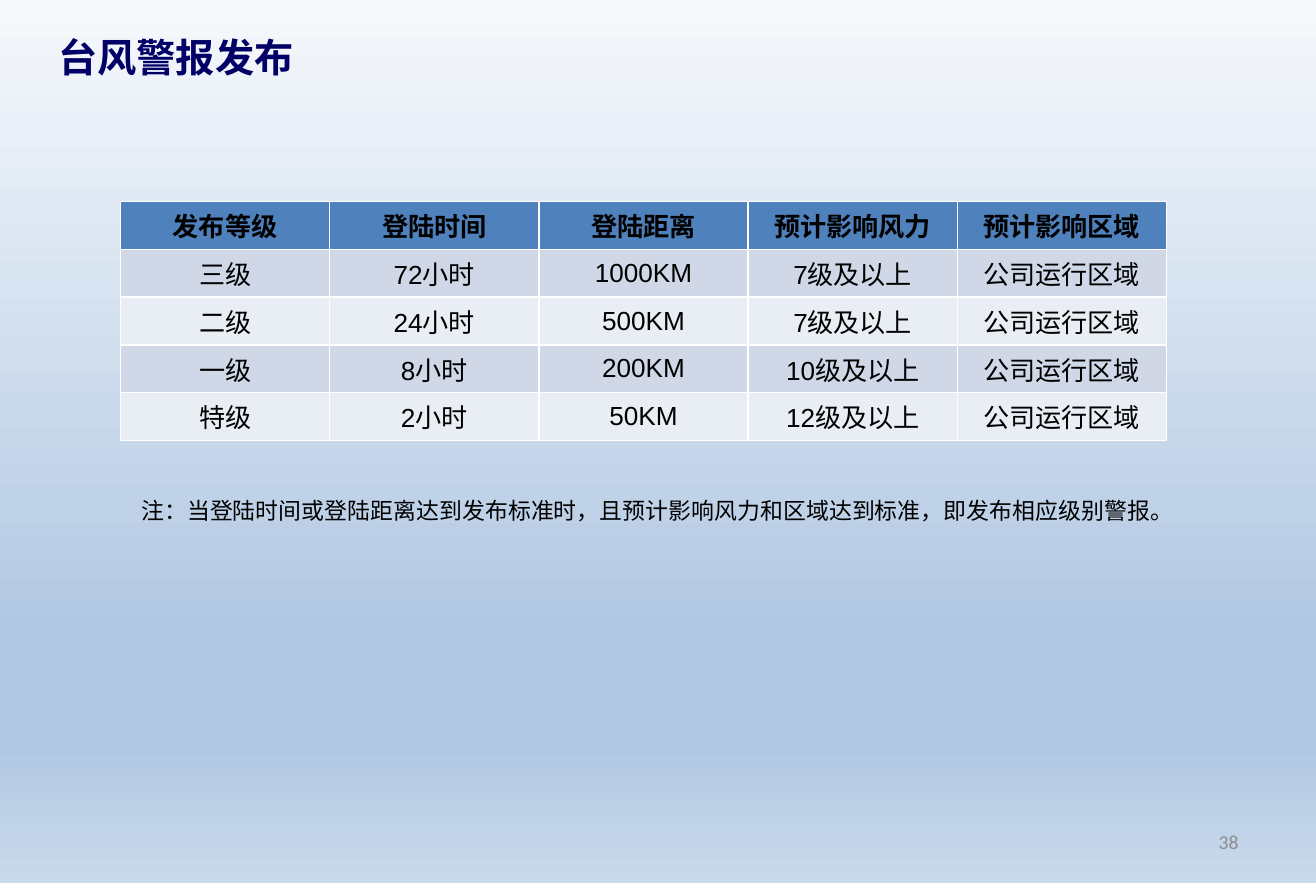
from lxml.etree import SubElement
from pptx import Presentation
from pptx.dml.color import RGBColor
from pptx.enum.text import MSO_ANCHOR, MSO_AUTO_SIZE, PP_ALIGN
from pptx.oxml.ns import qn
from pptx.util import Cm, Pt

LEVELS = [
    ["发布等级", "登陆时间", "登陆距离", "预计影响风力", "预计影响区域"],
    ["三级", "72小时", "1000KM", "7级及以上", "公司运行区域"],
    ["二级", "24小时", "500KM", "7级及以上", "公司运行区域"],
    ["一级", "8小时", "200KM", "10级及以上", "公司运行区域"],
    ["特级", "2小时", "50KM", "12级及以上", "公司运行区域"],
]
NOTE = "注：当登陆时间或登陆距离达到发布标准时，且预计影响风力和区域达到标准，即发布相应级别警报。"


def color(value):
    """Turn a hex string into a colour."""
    return RGBColor.from_string(value)


def assign(target, values):
    """Set the attributes of target from a dict."""
    for name, value in values.items():
        setattr(target, name, value)


class SlideBuilder:
    """Hold the style and the current slide."""

    cjk = "Noto Sans CJK SC"
    header = "4F81BD"
    bands = ("E9EDF4", "D0D8E8")
    sky = ((0, "F6F9FC"), (74, "B0C6E1"), (83, "B0C6E1"), (100, "CAD9EB"))

    def __init__(self, deck):
        """Add a title-only slide to the deck."""
        self.slide = deck.slides.add_slide(deck.slide_layouts[5])

    def background(self):
        """Paint the vertical sky gradient."""
        fill = self.slide.background.fill
        fill.gradient()
        fill.gradient_angle = 270
        stops = self.slide.element.find(".//" + qn("a:gsLst"))
        for stop in list(stops):
            stops.remove(stop)
        for percent, value in self.sky:
            stop = SubElement(stops, qn("a:gs"), pos=str(percent * 1000))
            SubElement(stop, qn("a:srgbClr"), val=value)

    def add_line(self, frame, text, size, font, ink="000000", bold=False, align=PP_ALIGN.LEFT):
        """Put one formatted paragraph in a frame and return it."""
        paragraph = frame.paragraphs[0]
        paragraph.alignment = align
        run = paragraph.add_run()
        run.text = text
        assign(run.font, {"size": Pt(size), "bold": bold, "name": font})
        run.font.color.rgb = color(ink)
        SubElement(run.font._element, qn("a:ea"), typeface=self.cjk)
        return paragraph

    def title(self, text, box):
        """Place and format the title."""
        heading = self.slide.shapes.title
        assign(heading, dict(zip(("left", "top", "width", "height"), map(Cm, box))))
        assign(heading.text_frame, {
            "word_wrap": True,
            "auto_size": MSO_AUTO_SIZE.NONE,
            "vertical_anchor": MSO_ANCHOR.TOP,
        })
        self.add_line(heading.text_frame, text, 24, self.cjk, "000066", True)

    def text(self, text, box, size, font, anchor=MSO_ANCHOR.TOP, **style):
        """Add a wrapped text box and return its paragraph."""
        frame = self.slide.shapes.add_textbox(*map(Cm, box)).text_frame
        assign(frame, {"word_wrap": True, "vertical_anchor": anchor})
        return self.add_line(frame, text, size, font, **style)

    def table(self, rows, box):
        """Add a table with a header row and banded body rows."""
        grid = self.slide.shapes.add_table(len(rows), len(rows[0]), *map(Cm, box)).table
        cell_format = {
            "vertical_anchor": MSO_ANCHOR.MIDDLE,
            "margin_left": Cm(0.18),
            "margin_right": Cm(0.18),
            "margin_top": 0,
            "margin_bottom": 0,
        }
        for r, row in enumerate(rows):
            for c, value in enumerate(row):
                cell = grid.cell(r, c)
                assign(cell, cell_format)
                cell.fill.solid()
                cell.fill.fore_color.rgb = color(self.bands[r % 2] if r else self.header)
                self.add_line(cell.text_frame, value, 16, "Arial", bold=r == 0,
                              align=PP_ALIGN.CENTER)


def main():
    """Build the typhoon warning slide."""
    deck = Presentation()
    assign(deck, {"slide_width": Cm(28.4), "slide_height": Cm(19.05)})
    page = SlideBuilder(deck)
    page.background()
    page.title("台风警报发布", (1, 0.58, 13.6, 1.28))
    page.table(LEVELS, (2.6, 4.35, 22.58, 5.15))
    note = page.text(NOTE, (2.8, 10.3, 22.58, 1.15), 14, "Times New Roman")
    note.line_spacing = 1.5
    for name, value in {"marL": Cm(1.12), "indent": Cm(-1.12)}.items():
        note._p.get_or_add_pPr().set(name, str(value))
    page.text("38", (20.35, 17.66, 6.63, 1.02), 12, "Calibri", MSO_ANCHOR.MIDDLE,
              ink="8C8C8C", align=PP_ALIGN.RIGHT)
    deck.save("out.pptx")


if __name__ == "__main__":
    main()
